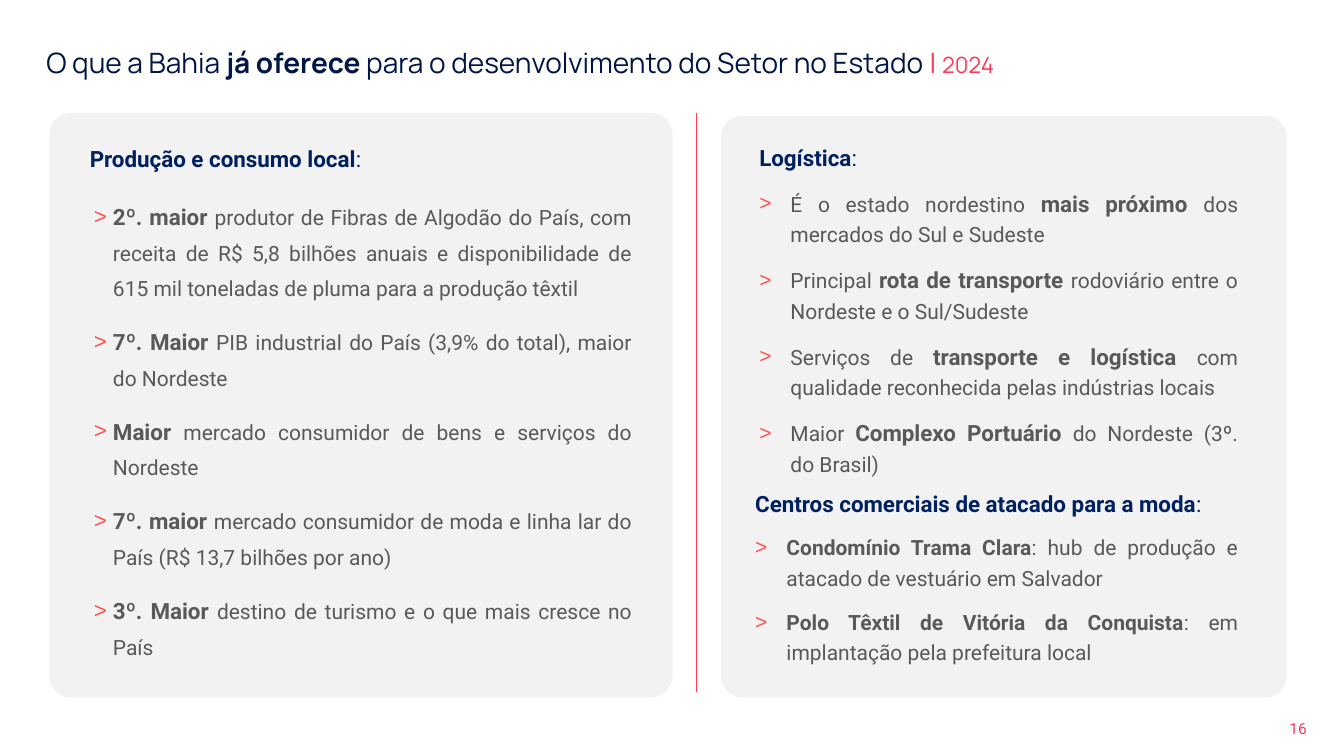
"""Build the slide on what Bahia already offers to the textile sector."""
from lxml import etree
from pptx import Presentation
from pptx.dml.color import RGBColor
from pptx.enum.shapes import MSO_CONNECTOR, MSO_SHAPE
from pptx.enum.text import MSO_ANCHOR, MSO_AUTO_SIZE, PP_ALIGN
from pptx.oxml.ns import qn
from pptx.util import Inches, Pt

NAVY = RGBColor(0x00, 0x16, 0x47)
BLUE = RGBColor(0x00, 0x20, 0x60)
RED = RGBColor(0xFF, 0x39, 0x54)
CORAL = RGBColor(0xFF, 0x50, 0x50)
GREY = RGBColor(0x59, 0x59, 0x59)
PALE = RGBColor(0xF2, 0xF2, 0xF2)
LEFT, RIGHT, FULL = PP_ALIGN.LEFT, PP_ALIGN.RIGHT, PP_ALIGN.JUSTIFY
TOP, MIDDLE = MSO_ANCHOR.TOP, MSO_ANCHOR.MIDDLE
ROUND, LINE, FIXED = MSO_SHAPE.ROUNDED_RECTANGLE, MSO_CONNECTOR.STRAIGHT, MSO_AUTO_SIZE.NONE
WIDE, HIGH = Inches(13.33), Inches(7.5)


def area(x, y, w, h):
    """Turn percentages of the slide into lengths."""
    return [round(part * side / 100) for part, side in zip((x, y, w, h), (WIDE, HIGH) * 2)]


def write(frame, text, size=15, strong=16, color=GREY, font="Roboto", align=FULL,
          lead=1.0, after=0, hang=0, join=False):
    """Add a paragraph, or join the last one; text between ** is bold."""
    par = frame.paragraphs[-1] if join or not frame.text else frame.add_paragraph()
    if not join:
        par.alignment, par.line_spacing = align, lead
        par.space_before, par.space_after = Pt(0), Pt(after)
        props = par._p.get_or_add_pPr()
        props.set("marL", str(Inches(hang)))
        props.set("indent", str(-Inches(hang)))
        if hang:
            tint = etree.SubElement(props, qn("a:buClr"))
            etree.SubElement(tint, qn("a:srgbClr"), val=str(CORAL))
            etree.SubElement(props, qn("a:buFont"), typeface="Arial")
            etree.SubElement(props, qn("a:buChar"), char=">")
        else:
            etree.SubElement(props, qn("a:buNone"))
    for spot, part in enumerate(text.split("**")):
        if part:
            run = par.add_run()
            run.text = part
            run.font.bold = spot % 2 == 1
            run.font.size = Pt(strong if run.font.bold else size)
            run.font.name = font
            run.font.color.rgb = color


deck = Presentation()
deck.slide_width, deck.slide_height = WIDE, HIGH
slide = deck.slides.add_slide(deck.slide_layouts[4])
shapes = slide.shapes

rule = shapes.add_connector(LINE, *area(51.84, 14.93, 0, 0))
rule.left, rule.top, rule.width, rule.height = area(51.84, 14.93, 0, 76.67)
rule.line.color.rgb, rule.line.width = RED, Pt(0.5)
etree.SubElement(rule._element.spPr, qn("a:effectLst"))

for spot in ((3.68, 14.93, 46.36, 77.33), (53.64, 15.33, 42.09, 76.93)):
    panel = shapes.add_shape(ROUND, *area(*spot))
    panel.adjustments[0] = 0.037
    panel.fill.solid()
    panel.fill.fore_color.rgb = PALE
    panel.line.fill.background()
    panel.shadow.inherit = False

spots = (
    (2.7, 4.67, 93.7, 6.13),
    (5.93, 18.53, 36.08, 4.93),
    (6.23, 24.8, 41.56, 66.53),
    (55.74, 17.65, 37.13, 46.48),
    (55.44, 64.13, 37.43, 30.27),
)
frames = []
for holder, spot in zip(list(slide.placeholders), spots):
    holder.left, holder.top, holder.width, holder.height = area(*spot)
    frame = holder.text_frame
    frame.word_wrap, frame.auto_size, frame.vertical_anchor = True, FIXED, TOP
    frames.append(frame)
    shapes._spTree.append(holder._element)
title, head, local, route, trade = frames

look = dict(font="Manrope", align=LEFT, lead=1.14)
write(title, "O que a Bahia **já oferece **para o desenvolvimento do Setor no Estado ",
      size=20, strong=20, color=NAVY, **look)
for text, size in (("| ", 20), ("2024", 16)):
    write(title, text, size=size, color=RED, join=True, **look)

write(head, "**Produção e consumo local**:", size=16, color=BLUE)
for text in (
    "**2º. maior **produtor de Fibras de Algodão do País, com receita de R$ 5,8 bilhões "
    "anuais e disponibilidade de 615 mil toneladas de pluma para a produção têxtil",
    "**7º. Maior **PIB industrial do País (3,9% do total), maior do Nordeste",
    "**Maior** mercado consumidor de bens e serviços do Nordeste",
    "**7º. maior **mercado consumidor de moda e linha lar do País (R$ 13,7 bilhões por ano)",
    "**3º. Maior **destino de turismo e o que mais cresce no País",
):
    write(local, text, lead=1.4, after=12, hang=0.19)

write(route, "**Logística**:", size=16, color=BLUE, lead=1.2, after=10)
for text in (
    "É o estado nordestino **mais próximo **dos mercados do Sul e Sudeste",
    "Principal **rota de transporte **rodoviário entre o Nordeste e o Sul/Sudeste",
    "Serviços de **transporte e logística **com qualidade reconhecida pelas indústrias locais",
    "Maior **Complexo Portuário **do Nordeste (3º. do Brasil)",
):
    write(route, text, lead=1.2, after=10, hang=0.31)

write(trade, "**Centros comerciais de atacado para a moda**:", size=16, color=BLUE, after=9.4)
for text in (
    "**Condomínio Trama Clara**: hub de produção e atacado de vestuário em Salvador",
    "**Polo Têxtil de Vitória da Conquista**: em implantação pela prefeitura local",
):
    write(trade, text, strong=15, lead=1.2, after=10, hang=0.31)

page = shapes.add_textbox(*area(74.87, 95.2, 23.33, 2.4)).text_frame
page.word_wrap, page.vertical_anchor = True, MIDDLE
page.margin_left = page.margin_right = Inches(0.13)
page.margin_top = page.margin_bottom = Inches(0.07)
write(page, "16", size=11, color=RED, align=RIGHT)

deck.save("out.pptx")
